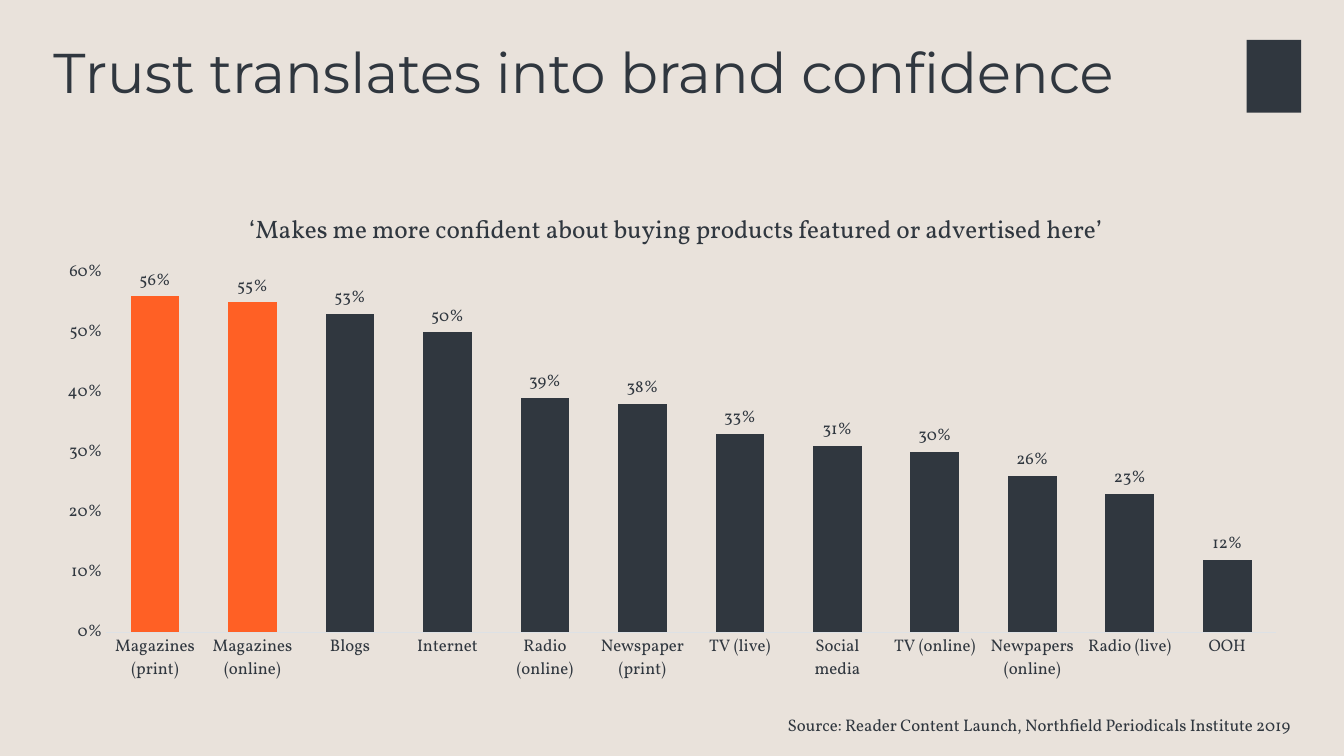
"""Build the brand confidence slide with a column chart."""
from lxml import etree
from pptx import Presentation
from pptx.chart.data import CategoryChartData as Data
from pptx.dml.color import RGBColor as Color
from pptx.enum.chart import XL_CHART_TYPE as Kind, XL_LABEL_POSITION as Place, XL_TICK_MARK as Tick
from pptx.enum.shapes import MSO_SHAPE as Form
from pptx.enum.text import MSO_ANCHOR as Anchor, PP_ALIGN as Align
from pptx.oxml.ns import qn
from pptx.util import Pt

TITLE = "Trust translates into brand confidence"
CLAIM = "‘Makes me more confident about buying products featured or advertised here’"
SOURCE = "Source: Reader Content Launch, Northfield Periodicals Institute 2019"
SCORES = {
    "Magazines (print)": 0.56, "Magazines (online)": 0.55, "Blogs": 0.53,
    "Internet": 0.5, "Radio (online)": 0.39, "Newspaper (print)": 0.38,
    "TV (live)": 0.33, "Social media": 0.31, "TV (online)": 0.3,
    "Newpapers (online)": 0.26, "Radio (live)": 0.23, "OOH": 0.12,
}
LEADERS = 2
INK, ACCENT, RULE, PAPER = "30373F", "FF6025", "DDE1E5", "E9E2DB"
HEAD, BODY = "Montserrat", "Vollkorn"
LEFT, RIGHT = 31, 929.5


def tint(fill, hue):
    fill.solid()
    fill.fore_color.rgb = Color.from_string(hue)


def style(font, size, face=BODY):
    font.size, font.name, font.bold = Pt(size), face, False
    font.color.rgb = Color.from_string(INK)


def write(frame, text, size, face, align, anchor):
    frame.word_wrap, frame.vertical_anchor = True, anchor
    para = frame.paragraphs[0]
    para.alignment, para.line_spacing = align, 0.9
    run = para.add_run()
    run.text = text
    style(run.font, size, face)


def layout(item, **parts):
    for old in item.findall(qn("c:layout")):
        item.remove(old)
    node = etree.Element(qn("c:layout"))
    box = etree.SubElement(node, qn("c:manualLayout"))
    if "w" in parts:
        etree.SubElement(box, qn("c:layoutTarget")).set("val", "inner")
    for side in "xy":
        etree.SubElement(box, qn(f"c:{side}Mode")).set("val", "edge")
    for key, value in parts.items():
        etree.SubElement(box, qn(f"c:{key}")).set("val", str(value))
    text = item.find(qn("c:tx"))
    item.insert(0 if text is None else 1, node)


def draw(slide):
    data = Data(number_format="0%")
    data.categories = list(SCORES)
    data.add_series("Series 1", list(SCORES.values()))
    chart = slide.shapes.add_chart(
        Kind.COLUMN_CLUSTERED, Pt(LEFT), Pt(133), Pt(RIGHT - LEFT), Pt(362), data).chart
    style(chart.font, 10)
    chart.has_legend = False
    chart.has_title = True
    run = chart.chart_title.text_frame.paragraphs[0].add_run()
    run.text = CLAIM
    style(run.font, 18)
    layout(chart.chart_title._element, x=0.16, y=0.04)

    cats, vals = chart.category_axis, chart.value_axis
    for axis in (cats, vals):
        axis.major_tick_mark = axis.minor_tick_mark = Tick.NONE
        axis.has_major_gridlines = False
        style(axis.tick_labels.font, 12)
    tint(cats.format.line.fill, RULE)
    cats.format.line.width = Pt(0.75)
    vals.format.line.fill.background()
    vals.minimum_scale, vals.maximum_scale, vals.major_unit = 0, 0.6, 0.1
    vals.tick_labels.number_format = "0%"
    vals.tick_labels.number_format_is_linked = False

    plot = chart.plots[0]
    plot.gap_width, plot.vary_by_categories = 100, False
    bars = plot.series[0]
    tint(bars.format.fill, INK)
    for i in range(LEADERS):
        tint(bars.points[i].format.fill, ACCENT)
    labels = bars.data_labels
    labels.show_value, labels.position = True, Place.OUTSIDE_END
    labels.number_format, labels.number_format_is_linked = "0%", False
    style(labels.font, 12)
    layout(chart._chartSpace.chart.plotArea, x=0.05, y=0.17, w=0.93, h=0.71)


def main():
    deck = Presentation()
    deck.slide_width, deck.slide_height = Pt(960), Pt(540)
    slide = deck.slides.add_slide(deck.slide_layouts[5])
    tint(slide.background.fill, PAPER)

    mark = slide.shapes.add_shape(Form.RECTANGLE, Pt(890.5), Pt(28.5), Pt(39), Pt(52))
    mark.shadow.inherit = False
    tint(mark.fill, INK)
    mark.line.fill.background()

    draw(slide)
    title = slide.shapes.title
    title.left, title.top, title.width, title.height = Pt(LEFT), Pt(28.5), Pt(800.5), Pt(104.5)
    write(title.text_frame, TITLE, 40, HEAD, Align.LEFT, Anchor.TOP)
    note = slide.shapes.add_textbox(Pt(492), Pt(504), Pt(RIGHT - 492), Pt(29.5))
    write(note.text_frame, SOURCE, 12, BODY, Align.RIGHT, Anchor.MIDDLE)
    deck.save("out.pptx")


if __name__ == "__main__":
    main()
